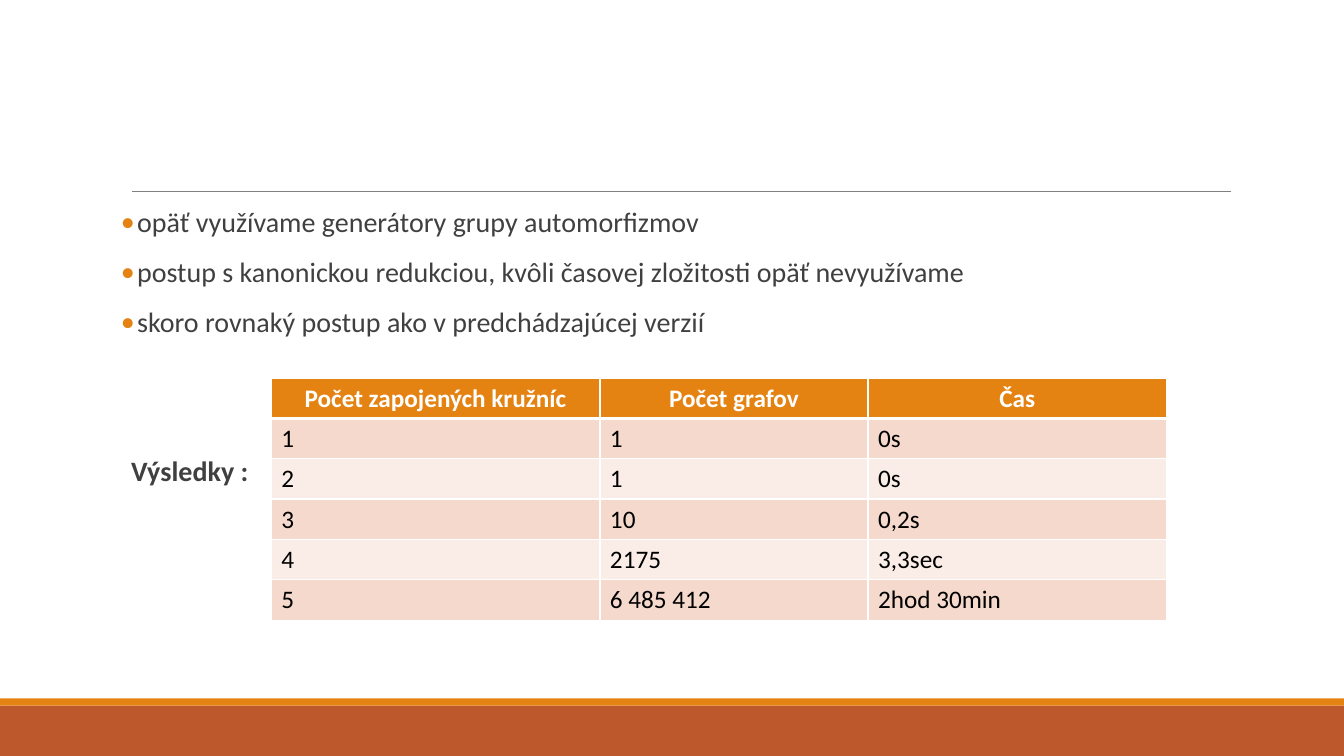
from pptx import Presentation
from pptx.dml.color import RGBColor
from pptx.enum.shapes import MSO_CONNECTOR, MSO_SHAPE
from pptx.enum.text import PP_ALIGN
from pptx.oxml.ns import qn
from pptx.util import Inches, Pt
from lxml.etree import SubElement


def rgb(hex_string):
    return RGBColor.from_string(hex_string)


def add_run(p, text, size, color, bold=False):
    r = p.add_run()
    r.text = text
    r.font.name = "Calibri"
    r.font.size = Pt(size)
    r.font.bold = bold
    r.font.color.rgb = rgb(color)


prs = Presentation()
prs.slide_width = Inches(13.33)
prs.slide_height = Inches(7.5)
s = prs.slides.add_slide(prs.slide_layouts[6])

for top, height, color in [(7, 0.5, "BD582C"), (6.93, 0.07, "E48312")]:
    sp = s.shapes.add_shape(MSO_SHAPE.RECTANGLE, 0, Inches(top),
                            prs.slide_width, Inches(height))
    sp.shadow.inherit = False
    sp.fill.solid()
    sp.fill.fore_color.rgb = rgb(color)
    sp.line.fill.background()

rule = s.shapes.add_connector(MSO_CONNECTOR.STRAIGHT, Inches(1.31), Inches(1.9),
                              Inches(12.21), Inches(1.9))
rule.line.color.rgb = rgb("808080")
rule.line.width = Pt(0.5)
SubElement(rule._element.spPr, qn("a:effectLst"))

body = s.shapes.add_textbox(Inches(1.2), Inches(2.02), Inches(11), Inches(4.4))
tf = body.text_frame
tf.word_wrap = True
tf.margin_left = tf.margin_right = 0

paragraphs = [
    ("opäť využívame generátory grupy automorfizmov", True, 12),
    ("postup s kanonickou redukciou, kvôli časovej zložitosti opäť nevyužívame", True, 12),
    ("skoro rovnaký postup ako v predchádzajúcej verzií", True, 12),
    ("Výsledky :", False, 83),
]
for i, (text, bulleted, space_before) in enumerate(paragraphs):
    p = tf.paragraphs[0] if i == 0 else tf.add_paragraph()
    p.line_spacing = 0.9
    p.space_before = Pt(space_before)
    p.space_after = Pt(2)
    pPr = p._p.get_or_add_pPr()
    if bulleted:
        pPr.set("marL", str(Inches(0.16)))
        pPr.set("indent", str(Inches(-0.16)))
        color = SubElement(pPr, qn("a:buClr"))
        SubElement(color, qn("a:srgbClr"), val="E48312")
        SubElement(pPr, qn("a:buFont"), typeface="Calibri")
        SubElement(pPr, qn("a:buChar"), char="•")
    else:
        pPr.set("marL", str(Inches(0.1)))
        pPr.set("indent", "0")
        SubElement(pPr, qn("a:buNone"))
    add_run(p, text, 20, "404040", bold=not bulleted)

rows = [
    ("Počet zapojených kružníc", "Počet grafov", "Čas"),
    ("1", "1", "0s"),
    ("2", "1", "0s"),
    ("3", "10", "0,2s"),
    ("4", "2175", "3,3sec"),
    ("5", "6 485 412", "2hod 30min"),
]
widths = [3.26, 2.66, 2.96]
table = s.shapes.add_table(len(rows), len(widths), Inches(2.69), Inches(3.75),
                           Inches(sum(widths)), Inches(0.4 * len(rows))).table
for column, width in zip(table.columns, widths):
    column.width = Inches(width)

for i, row in enumerate(rows):
    table.rows[i].height = Inches(0.4)
    header = i == 0
    fill = "E48312" if header else ("FAEDE7", "F5D9CC")[i % 2]
    for j, text in enumerate(row):
        cell = table.cell(i, j)
        tcPr = cell._tc.get_or_add_tcPr()
        for side in "LRTB":
            thick = (header and side == "B") or (i == 1 and side == "T")
            ln = SubElement(tcPr, qn("a:ln" + side), w=str(Pt(3 if thick else 1)))
            solid = SubElement(ln, qn("a:solidFill"))
            SubElement(solid, qn("a:srgbClr"), val="FFFFFF")
        cell.fill.solid()
        cell.fill.fore_color.rgb = rgb(fill)
        p = cell.text_frame.paragraphs[0]
        p.alignment = PP_ALIGN.CENTER if header else PP_ALIGN.LEFT
        add_run(p, text, 18, "FFFFFF" if header else "000000", bold=header)

prs.save("out.pptx")
